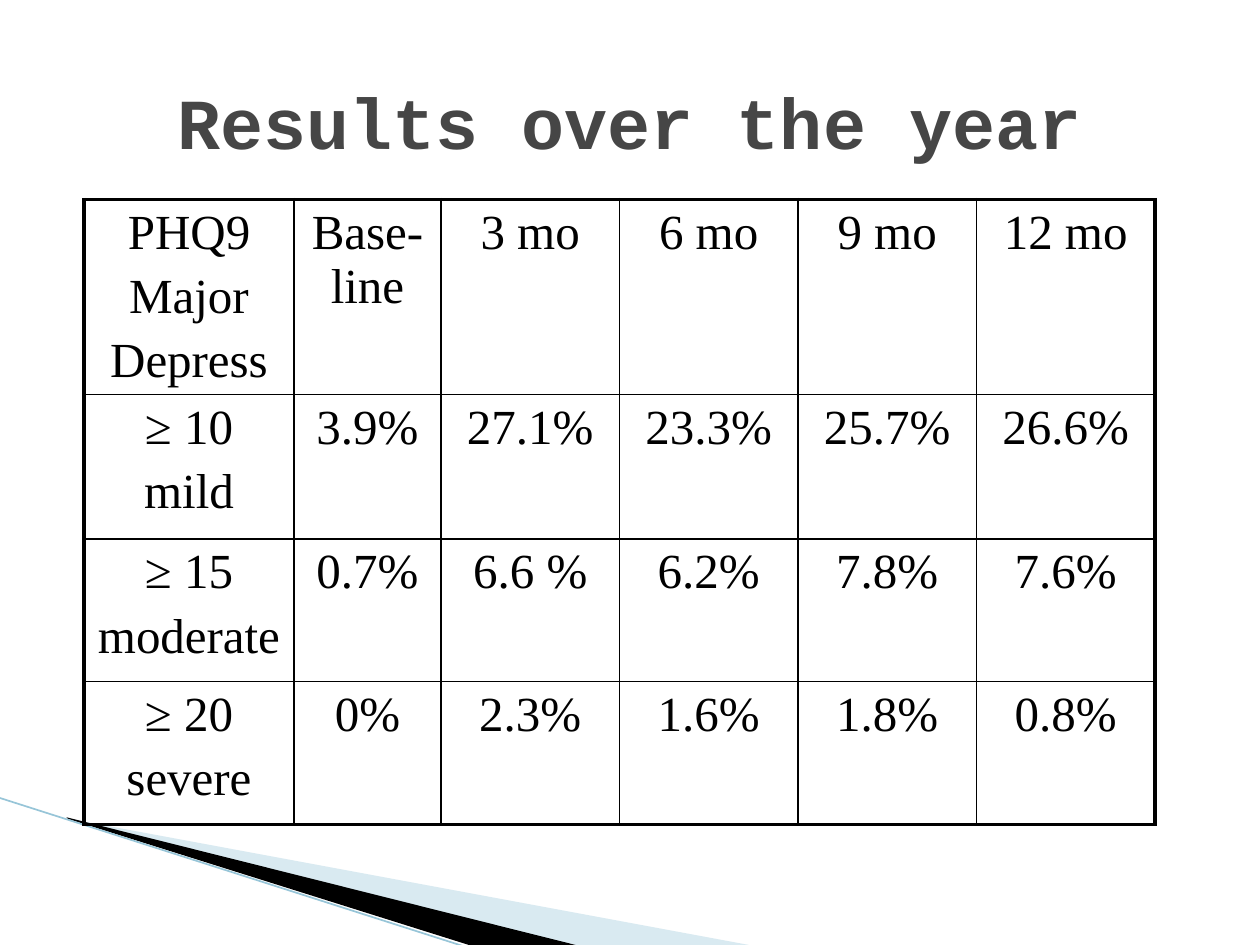
from dataclasses import dataclass

from lxml import etree
from pptx import Presentation
from pptx.dml.color import RGBColor
from pptx.enum.shapes import MSO_CONNECTOR
from pptx.enum.text import MSO_ANCHOR, PP_ALIGN
from pptx.oxml.ns import qn
from pptx.slide import Slide
from pptx.table import _Cell
from pptx.text.text import _Paragraph
from pptx.util import Pt

STRAIGHT = MSO_CONNECTOR.STRAIGHT
MIDDLE = MSO_ANCHOR.MIDDLE
TOP = MSO_ANCHOR.TOP
CENTER = PP_ALIGN.CENTER

BLACK = RGBColor(0x00, 0x00, 0x00)
GREY = RGBColor(0x46, 0x46, 0x46)
PALE_BLUE = RGBColor(0xA0, 0xCB, 0xDC)
LINE_BLUE = RGBColor(0x97, 0xC5, 0xD8)

THIN, THICK = 1, 2.25
COLUMN_WIDTHS = [120, 84, 102, 102, 102, 102]
ROW_HEIGHTS = [80.6, 82.6, 81.5, 81.5]
RESULTS = [
    ["PHQ9\nMajor\nDepress", "Base-line", "3 mo", "6 mo", "9 mo", "12 mo"],
    ["≥ 10\nmild", "3.9%", "27.1%", "23.3%", "25.7%", "26.6%"],
    ["≥ 15\nmoderate", "0.7%", "6.6 %", "6.2%", "7.8%", "7.6%"],
    ["≥ 20\nsevere", "0%", "2.3%", "1.6%", "1.8%", "0.8%"],
]


@dataclass(frozen=True)
class Wedge:
    points: list[tuple[float, float]]
    color: RGBColor
    opacity: int = 100


WEDGES = [
    Wedge([(39.6, 468.5), (428.4, 540), (328.3, 540), (39.6, 468)], PALE_BLUE, 40),
    Wedge([(38.2, 467.3), (329, 540), (267.8, 540), (38.9, 468)], BLACK),
]


def draw_wedge(page: Slide, wedge: Wedge) -> None:
    builder = page.shapes.build_freeform(*wedge.points[0], scale=Pt(1))
    builder.add_line_segments(wedge.points[1:], close=True)
    shape = builder.convert_to_shape()
    shape.shadow.inherit = False
    shape.line.fill.background()
    shape.fill.solid()
    shape.fill.fore_color.rgb = wedge.color
    if wedge.opacity < 100:
        color = shape.fill._xPr.find(".//" + qn("a:srgbClr"))
        etree.SubElement(color, qn("a:alpha"), val=str(wedge.opacity * 1000))


def draw_edge_line(page: Slide) -> None:
    line = page.shapes.add_connector(STRAIGHT, Pt(-0.7), Pt(455.8), Pt(267.1), Pt(541.4))
    line.line.color.rgb = LINE_BLUE
    line.line.width = Pt(0.95)
    etree.SubElement(line._element.spPr, qn("a:effectLst"))


def add_span(para: _Paragraph, text: str, font: str, size: float, color: RGBColor, bold: bool) -> None:
    para.alignment = CENTER
    span = para.add_run()
    span.text = text
    span.font.name = font
    span.font.size = Pt(size)
    span.font.bold = bold
    span.font.color.rgb = color


def set_title(page: Slide, text: str) -> None:
    title = page.shapes.title
    title.left, title.top, title.width, title.height = Pt(54), Pt(24), Pt(612), Pt(90)
    title.text_frame.vertical_anchor = MIDDLE
    add_span(title.text_frame.paragraphs[0], text, "Courier New", 41, GREY, True)


def set_borders(cell: _Cell, widths: dict[str, float]) -> None:
    properties = cell._tc.get_or_add_tcPr()
    for position, (side, width) in enumerate(widths.items()):
        border = etree.Element(qn(f"a:ln{side}"), w=str(Pt(width)))
        fill = etree.SubElement(border, qn("a:solidFill"))
        etree.SubElement(fill, qn("a:srgbClr"), val=str(BLACK))
        properties.insert(position, border)


def fill_cell(cell: _Cell, text: str) -> None:
    cell.fill.background()
    cell.vertical_anchor = TOP
    cell.margin_left = cell.margin_right = Pt(7.2)
    cell.margin_top = cell.margin_bottom = Pt(3.6)
    for number, line in enumerate(text.split("\n")):
        para = cell.text_frame.add_paragraph() if number else cell.text_frame.paragraphs[0]
        if number:
            para.space_before = Pt(5.6)
        add_span(para, line, "Times New Roman", 28, BLACK, False)


def draw_results(page: Slide) -> None:
    last_row, last_column = len(ROW_HEIGHTS) - 1, len(COLUMN_WIDTHS) - 1
    frame = page.shapes.add_table(
        last_row + 1, last_column + 1, Pt(48), Pt(114), Pt(sum(COLUMN_WIDTHS)), Pt(sum(ROW_HEIGHTS))
    )
    table = frame.table
    table.first_row = table.horz_banding = False
    for column, width in zip(table.columns, COLUMN_WIDTHS):
        column.width = Pt(width)
    for row, height in zip(table.rows, ROW_HEIGHTS):
        row.height = Pt(height)
    for y, texts in enumerate(RESULTS):
        for x, text in enumerate(texts):
            cell = table.cell(y, x)
            fill_cell(cell, text)
            set_borders(cell, {
                "L": THICK if x == 0 else THIN,
                "R": THICK if x == last_column else THIN,
                "T": THICK if y == 0 else THIN,
                "B": THICK if y == last_row else THIN,
            })


def main() -> None:
    deck = Presentation()
    deck.slide_width, deck.slide_height = Pt(720), Pt(540)
    page = deck.slides.add_slide(deck.slide_layouts[5])
    for wedge in WEDGES:
        draw_wedge(page, wedge)
    draw_edge_line(page)
    set_title(page, "Results over the year")
    draw_results(page)
    deck.save("out.pptx")


if __name__ == "__main__":
    main()
